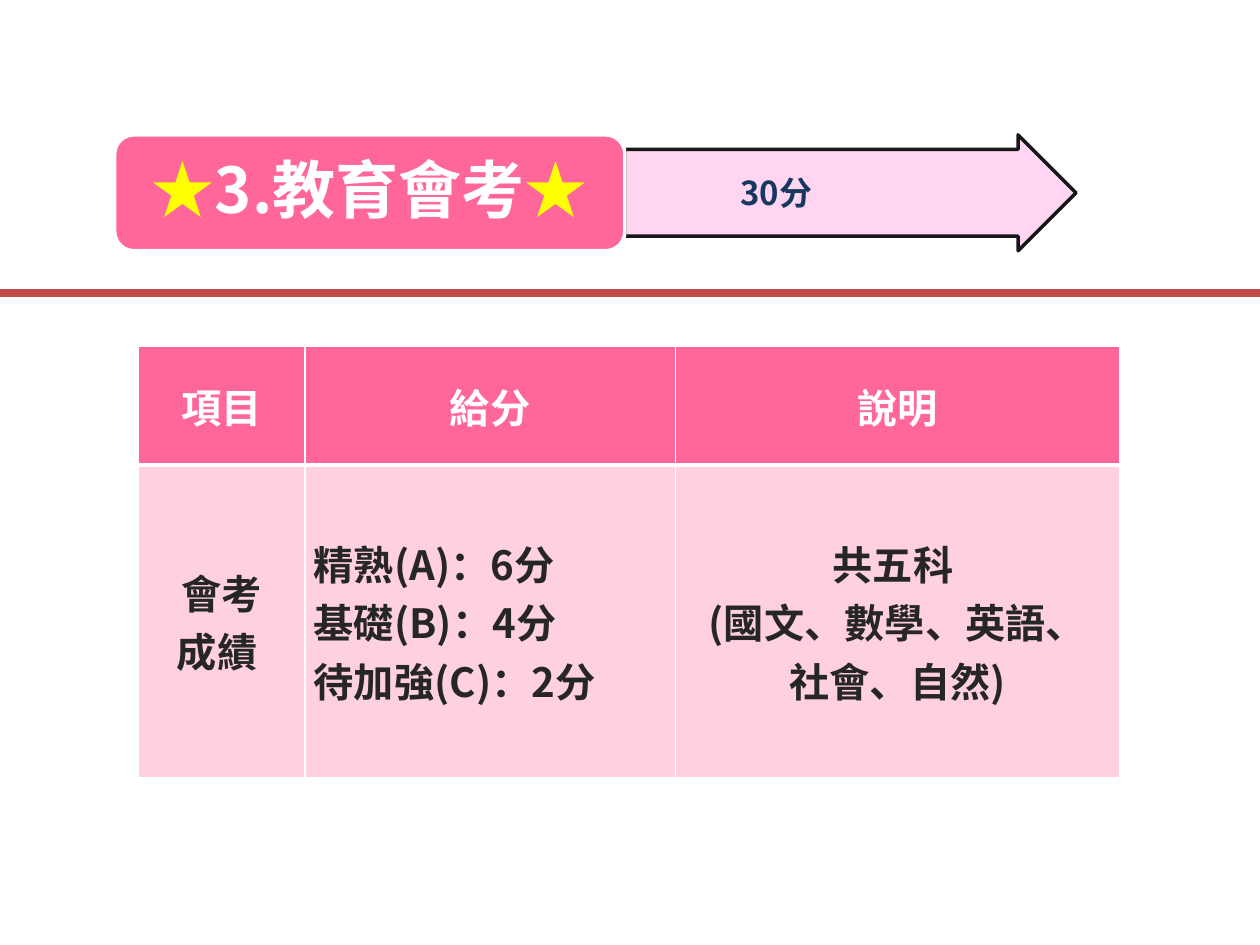
from lxml import etree
from pptx import Presentation
from pptx.dml.color import RGBColor
from pptx.enum.shapes import MSO_CONNECTOR, MSO_SHAPE
from pptx.enum.text import MSO_ANCHOR, MSO_AUTO_SIZE, PP_ALIGN
from pptx.oxml.ns import qn
from pptx.util import Inches, Pt

CENTER, LEFT = PP_ALIGN.CENTER, PP_ALIGN.LEFT
MIDDLE = MSO_ANCHOR.MIDDLE
ARROW, ROUNDED = MSO_SHAPE.RIGHT_ARROW, MSO_SHAPE.ROUNDED_RECTANGLE
STRAIGHT = MSO_CONNECTOR.STRAIGHT

WHITE = RGBColor(0xFF, 0xFF, 0xFF)
BLACK = RGBColor(0x00, 0x00, 0x00)
YELLOW = RGBColor(0xFF, 0xFF, 0x00)
PINK = RGBColor(0xFF, 0x66, 0x99)
PALE_PINK = RGBColor(0xFF, 0xD1, 0xE0)
LILAC = RGBColor(0xFF, 0xD1, 0xF0)
NAVY = RGBColor(0x17, 0x37, 0x5E)
CHARCOAL = RGBColor(0x26, 0x26, 0x26)
BRICK = RGBColor(0xBF, 0x4C, 0x48)

FONT = "Noto Sans CJK SC"
SLIDE_WIDTH, SLIDE_HEIGHT = 10, 7.5
BANNER_LEFT, BANNER_TOP, BANNER_HEIGHT = 0.91, 1.07, 0.92
LABEL_WIDTH, ARROW_WIDTH = 4.05, 3.58
LABEL_INSET = 0.04
RULE_TOP = 0.31 * SLIDE_HEIGHT
TABLE_LEFT, TABLE_TOP = 0.11 * SLIDE_WIDTH, 2.75
COLUMN_WIDTHS = (1.32, 2.94, 3.53)
ROW_HEIGHTS = (0.94, 2.48)

HEADINGS = (["項目"], ["給分"], ["說明"])
SCORES = (
    ["會考", "成績 "],
    ["精熟(A)：6分", "基礎(B)：4分", "待加強(C)：2分"],
    ["共五科 \v(國文、數學、英語、 社會、自然)"],
)


def write(frame, paragraphs, size, color, align=CENTER, spacing=None):
    """Fill a frame; a paragraph is a string or a list of (string, color) runs."""
    for index, content in enumerate(paragraphs):
        paragraph = frame.add_paragraph() if index else frame.paragraphs[0]
        paragraph.alignment = align
        if spacing:
            paragraph.line_spacing = spacing
        runs = [(content, color)] if isinstance(content, str) else content
        for words, run_color in runs:
            for number, line in enumerate(words.split("\v")):
                if number:
                    paragraph.add_line_break()
                run = paragraph.add_run()
                run.text = line
                font = run.font
                font.name, font.size, font.bold = FONT, Pt(size), True
                font.color.rgb = run_color
                east_asian = etree.Element(qn("a:ea"), typeface=FONT)
                run.font._element.find(qn("a:latin")).addnext(east_asian)


def set_opacity(shape, percent):
    for color in shape.element.spPr.iter(qn("a:srgbClr")):
        etree.SubElement(color, qn("a:alpha"), val=str(percent * 1000))


def add_block(slide, kind, left, width, fill, outline):
    block = slide.shapes.add_shape(
        kind, Inches(left), Inches(BANNER_TOP), Inches(width), Inches(BANNER_HEIGHT))
    block.shadow.inherit = False
    block.fill.solid()
    block.fill.fore_color.rgb = fill
    block.line.color.rgb = outline
    block.line.width = Pt(2)
    return block


def place_title(slide):
    title = slide.shapes.title
    title.left = Inches(BANNER_LEFT + LABEL_INSET)
    title.top = Inches(BANNER_TOP + LABEL_INSET)
    title.width = Inches(LABEL_WIDTH - 2 * LABEL_INSET)
    title.height = Inches(BANNER_HEIGHT - 2 * LABEL_INSET)
    frame = title.text_frame
    frame.auto_size = MSO_AUTO_SIZE.NONE
    frame.vertical_anchor = MIDDLE
    frame.margin_left = frame.margin_right = Inches(0.15)
    frame.margin_top = frame.margin_bottom = Inches(0.07)
    star = ("★", YELLOW)
    write(frame, [[star, ("3.教育會考", WHITE), star]], 36, WHITE, spacing=0.9)
    slide.shapes.element.append(title.element)  # bring in front of the banner


def add_banner(slide):
    arrow = add_block(slide, ARROW, BANNER_LEFT + LABEL_WIDTH, ARROW_WIDTH, LILAC, BLACK)
    arrow.adjustments[0] = 0.75
    set_opacity(arrow, 90)
    add_block(slide, ROUNDED, BANNER_LEFT, LABEL_WIDTH, PINK, WHITE)
    place_title(slide)
    points = slide.shapes.add_textbox(Inches(4.72), Inches(1.32), Inches(2.88), Inches(0.42))
    points.text_frame.word_wrap = True
    write(points.text_frame, ["30分"], 18.8, NAVY)


def add_rule(slide):
    rule = slide.shapes.add_connector(
        STRAIGHT, 0, Inches(RULE_TOP), Inches(SLIDE_WIDTH), Inches(RULE_TOP))
    rule.line.color.rgb = BRICK
    rule.line.width = Pt(4.5)
    etree.SubElement(rule.element.spPr, qn("a:effectLst"))


def set_borders(cell, top, bottom):
    properties = cell._tc.get_or_add_tcPr()
    for side, width in (("L", 1), ("R", 1), ("T", top), ("B", bottom)):
        border = etree.SubElement(properties, qn(f"a:ln{side}"), w=str(Pt(width)))
        fill = etree.SubElement(border, qn("a:solidFill"))
        etree.SubElement(fill, qn("a:srgbClr"), val=str(WHITE))


def fill_cell(cell, paragraphs, fill, color, align, top, bottom):
    set_borders(cell, top, bottom)
    cell.fill.solid()
    cell.fill.fore_color.rgb = fill
    cell.vertical_anchor = MIDDLE
    cell.margin_left = cell.margin_right = Inches(0.07)
    cell.margin_top = cell.margin_bottom = Inches(0.04)
    write(cell.text_frame, paragraphs, 23, color, align=align)


def add_score_table(slide):
    table = slide.shapes.add_table(
        len(ROW_HEIGHTS), len(COLUMN_WIDTHS), Inches(TABLE_LEFT), Inches(TABLE_TOP),
        Inches(sum(COLUMN_WIDTHS)), Inches(sum(ROW_HEIGHTS))).table
    for row, height in zip(table.rows, ROW_HEIGHTS):
        row.height = Inches(height)
    for index, width in enumerate(COLUMN_WIDTHS):
        table.columns[index].width = Inches(width)
        fill_cell(table.cell(0, index), HEADINGS[index], PINK, WHITE, CENTER, 1, 3)
        align = LEFT if index == 1 else CENTER
        fill_cell(table.cell(1, index), SCORES[index], PALE_PINK, CHARCOAL, align, 3, 1)


def main():
    deck = Presentation()
    deck.slide_width, deck.slide_height = Inches(SLIDE_WIDTH), Inches(SLIDE_HEIGHT)
    slide = deck.slides.add_slide(deck.slide_layouts[5])
    add_score_table(slide)
    add_banner(slide)
    add_rule(slide)
    deck.save("out.pptx")


if __name__ == "__main__":
    main()
